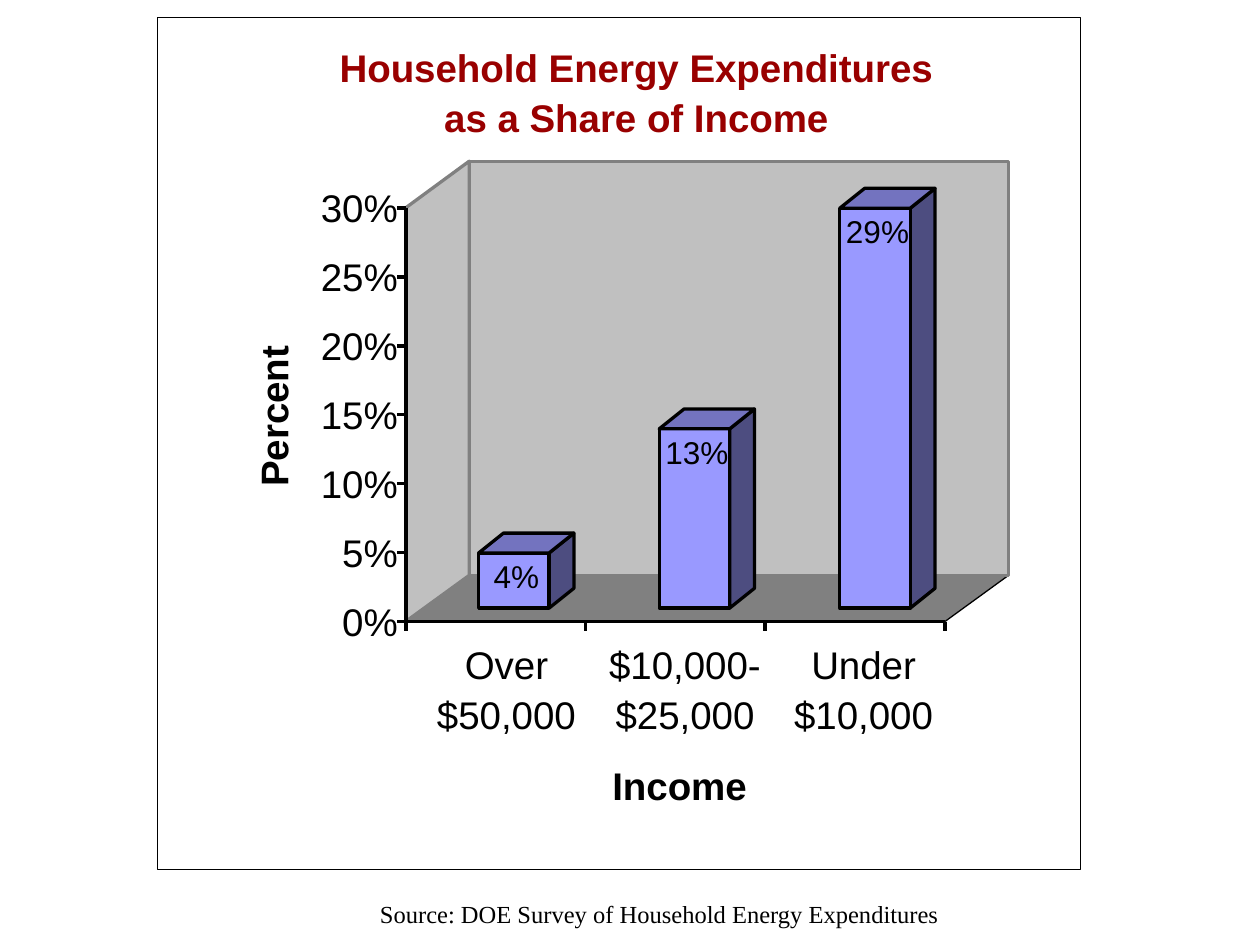
from lxml import etree
from pptx import Presentation
from pptx.dml.color import RGBColor
from pptx.enum import shapes, text
from pptx.oxml import ns
from pptx.util import Cm, Pt

BLACK = RGBColor(0x00, 0x00, 0x00)
WHITE = RGBColor(0xFF, 0xFF, 0xFF)
DARK_RED = RGBColor(0x99, 0x00, 0x00)
WALL = RGBColor(0xC0, 0xC0, 0xC0)
GREY = RGBColor(0x80, 0x80, 0x80)
BAR_FRONT = RGBColor(0x99, 0x99, 0xFF)
BAR_SIDE = RGBColor(0x4D, 0x4D, 0x80)
BAR_TOP = RGBColor(0x73, 0x73, 0xBF)
HAIRLINE, THICK = Pt(0), Pt(1.87)

presentation = Presentation()
presentation.slide_width, presentation.slide_height = Cm(25.4), Cm(19.05)
slide = presentation.slides.add_slide(presentation.slide_layouts[5])


def add_face(corners, fill, line, width):
    """Two opposite corners give a rectangle, more give a polygon."""
    points = [(Cm(x), Cm(y)) for x, y in corners]
    if len(points) == 2:
        (x1, y1), (x2, y2) = points
        face = slide.shapes.add_shape(shapes.MSO_SHAPE.RECTANGLE, x1, y1, x2 - x1, y2 - y1)
    else:
        builder = slide.shapes.build_freeform(*points[0], scale=1.0)
        builder.add_line_segments(points[1:], close=True)
        face = builder.convert_to_shape()
    face.shadow.inherit = False
    face.fill.solid()
    face.fill.fore_color.rgb = fill
    face.line.color.rgb = line
    face.line.width = width


def write(box, wording, left, top, width, height, size=22, bold=False,
          align=text.PP_ALIGN.CENTER, color=BLACK, font="Arial", spacing=None):
    box.left, box.top, box.width, box.height = Cm(left), Cm(top), Cm(width), Cm(height)
    frame = box.text_frame
    frame.text = wording
    frame.word_wrap = True
    frame.auto_size = text.MSO_AUTO_SIZE.NONE
    frame.vertical_anchor = text.MSO_ANCHOR.TOP
    frame.margin_left = frame.margin_right = frame.margin_top = frame.margin_bottom = 0
    for paragraph in frame.paragraphs:
        paragraph.alignment = align
        paragraph.space_before = Pt(0)
        if spacing:
            paragraph.line_spacing = spacing
        for run in paragraph.runs:
            run.font.name, run.font.size, run.font.bold = font, Pt(size), bold
            run.font.color.rgb = color


# Frame and title
add_face([(3.18, 0.36), (21.78, 17.53)], WHITE, BLACK, HAIRLINE)
title = slide.shapes.title
slide.shapes._spTree.append(title._element)  # bring in front of the frame
write(title, "Household Energy Expenditures\nas a Share of Income", 6.33, 0.8, 13, 2.1,
      bold=True, color=DARK_RED, spacing=Pt(28.8))

# Floor and walls
axis_left, axis_right, axis_top, base = 8.18, 19.05, 4.19, 12.53
back_left, back_right, back_top, back_base = 9.46, 20.33, 3.25, 11.6
add_face([(axis_left, base), (back_left, back_base), (back_right, back_base),
          (axis_right, base)], GREY, BLACK, HAIRLINE)
add_face([(axis_left, base), (axis_left, axis_top), (back_left, back_top),
          (back_left, back_base)], WALL, GREY, THICK)
add_face([(back_left, back_top), (back_right, back_base)], WALL, GREY, THICK)

# Bars with their categories
percent_height = (base - axis_top) / 30
bar_base, bar_width, depth_x, depth_y = 12.26, 1.42, 0.5, 0.4
shares = [("Over\n$50,000", 4), ("$10,000-\n$25,000", 13), ("Under\n$10,000", 29)]
for i, (category, share) in enumerate(shares):
    left = 9.65 + 3.64 * i
    right = left + bar_width
    top = bar_base - share * percent_height
    add_face([(right, bar_base), (right, top), (right + depth_x, top - depth_y),
              (right + depth_x, bar_base - depth_y)], BAR_SIDE, BLACK, THICK)
    add_face([(left, top), (right, bar_base)], BAR_FRONT, BLACK, THICK)
    add_face([(right, top), (right + depth_x, top - depth_y),
              (left + depth_x, top - depth_y), (left, top)], BAR_TOP, BLACK, THICK)
    write(slide.shapes.add_textbox(0, 0, 0, 0), f"{share}%",
          left - 0.1, top + 0.08, bar_width + 0.3, 0.76, size=18)
    write(slide.shapes.add_textbox(0, 0, 0, 0), category,
          8.46 + 3.6 * i, 12.83, 3.5, 2.1, spacing=Pt(28.8))

# Axes, ticks and percent labels
axis_lines = [(axis_left, base, axis_left, axis_top), (axis_left, base, axis_right, base)]
for percent in range(0, 31, 5):
    y = base - percent * percent_height
    axis_lines.append((axis_left, y, axis_left - 0.18, y))
    write(slide.shapes.add_textbox(0, 0, 0, 0), f"{percent}%",
          6, y - 0.47, 2.02, 0.94, align=text.PP_ALIGN.RIGHT)
for i in range(4):
    x = axis_left + i * (axis_right - axis_left) / 3
    axis_lines.append((x, base, x, base + 0.2))
for ends in axis_lines:
    line = slide.shapes.add_connector(shapes.MSO_CONNECTOR.STRAIGHT, *map(Cm, ends))
    line.line.color.rgb = BLACK
    line.line.width = HAIRLINE
    etree.SubElement(line._element.spPr, ns.qn("a:effectLst"))

# Axis titles and source
percent_title = slide.shapes.add_textbox(0, 0, 0, 0)
write(percent_title, "Percent", 4.01, 7.92, 3, 0.94, bold=True)
percent_title.rotation = 270
write(slide.shapes.add_textbox(0, 0, 0, 0), "Income", 12.2, 15.37, 3, 0.94, bold=True)
write(slide.shapes.add_textbox(0, 0, 0, 0),
      "Source: DOE Survey of Household Energy Expenditures", 7.66, 18.13, 17.5, 0.7,
      size=14, align=text.PP_ALIGN.LEFT, font="Times New Roman")

presentation.save("out.pptx")
